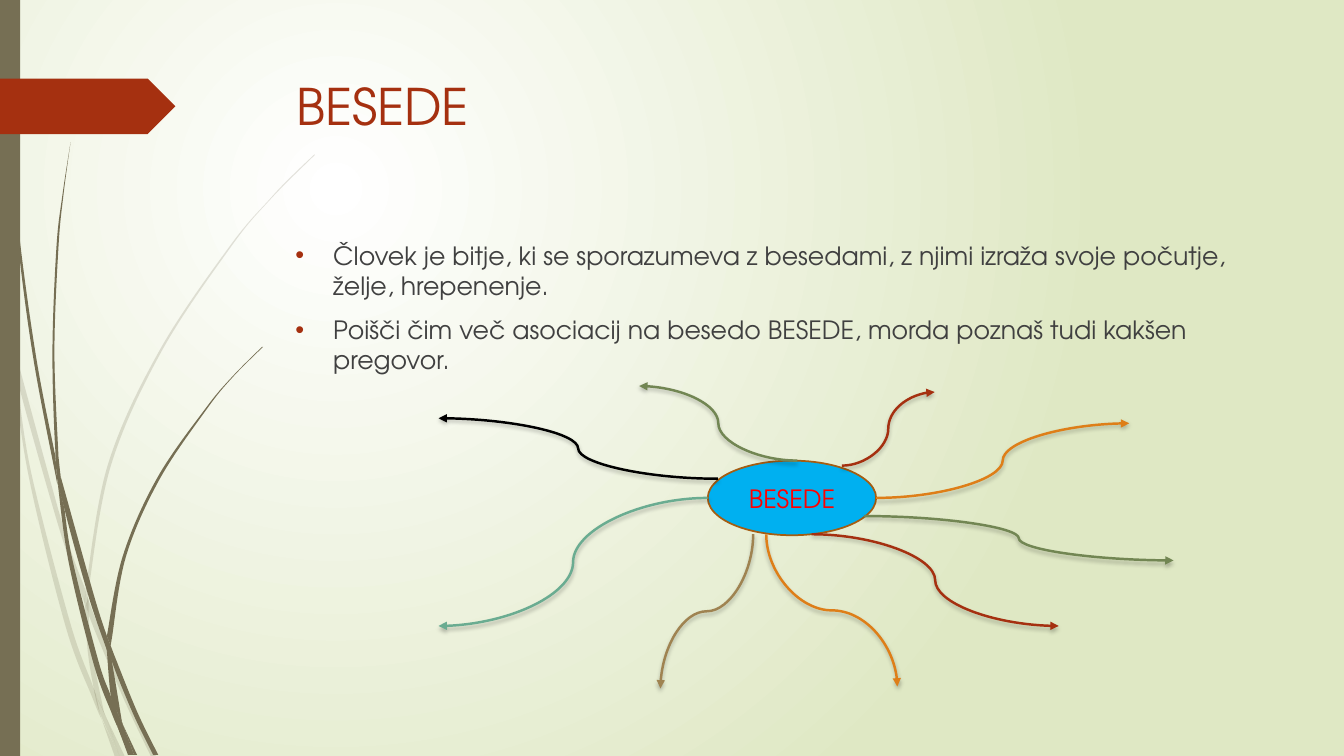
import lxml.etree
import pptx
import pptx.dml.color
import pptx.enum.shapes
import pptx.enum.text
import pptx.oxml.ns
import pptx.util

CM_PER_INCH = 2.54
FONT = "TeX Gyre Adventor"
COLOURS = {
    "centre": "FFFFFF", "edge": "DFE8C4", "stalk": "766F54", "red": "A53010", "text": "404040",
    "bubble": "00B0F0", "bubble_line": "A45D12", "word": "FF0000", "orange": "DE7E18",
    "teal": "6AAC91", "black": "000000", "brown": "9F8351", "green": "728653",
}

HEADING = "BESEDE"
POINTS = [
    "Človek je bitje, ki se sporazumeva z besedami, z njimi izraža svoje počutje, želje, hrepenenje.",
    "Poišči čim več asociacij na besedo BESEDE, morda poznaš tudi kakšen pregovor.",
]
WORD = "BESEDE"

PALE_STALKS = [
    ([(0, 2.82), (0.09, 3.22), (0.11, 3.5)], [(0.1, 3.44), (0, 2.99)]),
    ([(0.14, 3.45), (0.17, 3.76), (0.58, 5.22), (0.84, 5.99)], [(0.85, 5.86), (0.62, 5.2), (0.14, 3.45)]),
    ([(0.88, 5.96), (0.88, 6.1), (1.23, 6.94), (1.5, 7.51)], [(1.55, 7.51), (1.27, 6.92), (0.92, 6.07)]),
    ([(1.05, 7.11), (1.19, 7.51)], [(1.24, 7.51), (1.05, 7.11)]),
    ([(0.11, 3.5), (0.28, 4.7), (0.65, 6.21), (0.92, 6.93), (1.01, 7.14)],
     [(0.99, 7.07), (0.93, 6.83), (0.7, 6.19), (0.31, 4.69), (0.17, 3.76)]),
    ([(0.84, 5.99), (0.87, 6.46), (0.93, 6.83), (0.96, 6.92), (1.05, 7.11)],
     [(1.03, 7.06), (0.91, 6.46), (0.88, 6.1)]),
    ([(3.12, 1.53), (2.89, 1.75), (2.68, 1.97), (2.28, 2.44), (1.58, 3.48), (1.07, 4.61), (0.85, 5.84)],
     [(0.88, 5.96), (0.88, 5.84), (1.1, 4.62), (1.6, 3.49), (2.29, 2.45), (2.68, 1.98), (3.12, 1.54)]),
    ([(1.01, 7.14), (1.14, 7.51)], [(1.19, 7.51), (1.01, 7.14)]),
    ([(0.85, 5.86), (0.84, 5.99), (0.88, 6.08)], [(0.88, 6.1), (0.88, 5.96)]),
    ([(0.93, 6.83), (0.99, 7.07), (1.19, 7.51)], [(1.19, 7.51), (1.05, 7.11), (0.96, 6.92)]),
]
DARK_STALKS = [
    ([(0.03, 0), (0.04, 0.48), (0.07, 1.1), (0.17, 2.33), (0.33, 3.55), (0.57, 4.81)],
     [(0.55, 4.53), (0.36, 3.55), (0.19, 2.32), (0.08, 1.09), (0.05, 0.48), (0.04, 0)]),
    ([(0.6, 4.72), (0.64, 5.05), (0.88, 5.92), (1.06, 6.45)], [(1.06, 6.31), (0.93, 5.9), (0.6, 4.72)]),
    ([(1.1, 6.41), (1.11, 6.56), (1.32, 7.08), (1.52, 7.49)], [(1.57, 7.49), (1.36, 7.06), (1.13, 6.49)]),
    ([(0.57, 4.77), (0.68, 5.57), (0.93, 6.59), (1.11, 7.08), (1.17, 7.22)],
     [(1.16, 7.17), (1.1, 6.91), (0.98, 6.57), (0.72, 5.56), (0.64, 5.05)]),
    ([(0.7, 1.41), (0.62, 1.93), (0.56, 2.45), (0.52, 3.49), (0.55, 4.49), (0.6, 4.72)],
     [(0.58, 4.53), (0.54, 3.49), (0.58, 2.45), (0.63, 1.93), (0.7, 1.41)]),
    ([(1.22, 7.19), (1.33, 7.49)], [(1.36, 7.49), (1.22, 7.19)]),
    ([(0.55, 4.49), (0.57, 4.77), (0.64, 5.05)], [(0.6, 4.72), (0.55, 4.49)]),
    ([(2.6, 3.44), (2.31, 3.73), (2.04, 4.05), (1.56, 4.74), (1.22, 5.51), (1.06, 6.31)],
     [(1.1, 6.41), (1.11, 6.33), (1.25, 5.52), (1.58, 4.76), (2.05, 4.06), (2.31, 3.74), (2.61, 3.44)]),
    ([(1.17, 7.22), (1.27, 7.49)], [(1.31, 7.49), (1.17, 7.22)]),
    ([(1.06, 6.45), (1.1, 6.91), (1.16, 7.06), (1.22, 7.19)], [(1.21, 7.16), (1.11, 6.56), (1.09, 6.51)]),
    ([(1.06, 6.31), (1.06, 6.45), (1.11, 6.56)], [(1.1, 6.41), (1.06, 6.31)]),
    ([(1.1, 6.91), (1.17, 7.22), (1.3, 7.49)], [(1.33, 7.49), (1.22, 7.19), (1.16, 7.06)]),
]
ARROWS = [
    ((8.69, 4.94), (11.2, 4.2), "orange", False),
    ((7.02, 4.94), (4.35, 6.21), "teal", False),
    ((8.05, 5.3), (10.5, 6.21), "red", False),
    ((7.12, 4.75), (4.35, 4.15), "black", False),
    ((7.47, 5.3), (6.55, 6.83), "brown", True),
    ((8.35, 4.62), (9.27, 3.89), "red", False),
    ((7.6, 5.3), (8.9, 6.81), "orange", True),
    ((8.57, 5.12), (11.64, 5.56), "green", False),
    ((7.91, 4.57), (6.34, 3.83), "green", False),
]
TITLE, BODY = (2.84, 0.69, 9.75, 1.4), (2.83, 2.33, 9.75, 4.13)
STRIP, TAG, BUBBLE = (0, 0, 0.2, 7.5), (0, 0.78, 1.74, 0.55), (7.02, 4.57, 1.67, 0.74)


def lengths(*inches):
    return [pptx.util.Cm(value * CM_PER_INCH) for value in inches]


def colour(name):
    return pptx.dml.color.RGBColor.from_string(COLOURS[name])


def add_xml(parent, tag, **attributes):
    return lxml.etree.SubElement(parent, pptx.oxml.ns.qn(tag), attributes)


def apply_formats(target, formats):
    for name, value in formats.items():
        setattr(target, name, value)


def paint(part, fill, line=None):
    part.shadow.inherit = False
    part.fill.solid()
    part.fill.fore_color.rgb = colour(fill)
    if line:
        part.line.color.rgb = colour(line)
        part.line.width = pptx.util.Pt(1.25)
    else:
        part.line.fill.background()


def write(paragraph, text, size, ink, align):
    paragraph.alignment = align
    run = paragraph.add_run()
    run.text = text
    apply_formats(run.font, {"name": FONT, "size": pptx.util.Pt(size)})
    run.font.color.rgb = colour(ink)


def curve_points(edge):
    padded = [edge[0], *edge, edge[-1]]
    for before, start, end, after in zip(padded, padded[1:], padded[2:], padded[3:]):
        yield [s + (e - b) / 6 for b, s, e in zip(before, start, end)]
        yield [e - (a - s) / 6 for s, e, a in zip(start, end, after)]
        yield end


def draw_stalk(shapes, down, up, opacity):
    points = [*curve_points(down), down[-1], up[0], up[0], *curve_points(up)]
    builder = shapes.build_freeform(*lengths(*down[0]))
    builder.add_line_segments([lengths(*point) for point in points])
    stalk = builder.convert_to_shape()
    paint(stalk, "stalk")
    outline = stalk.element.spPr.find(".//" + pptx.oxml.ns.qn("a:path"))
    lines = outline.findall(pptx.oxml.ns.qn("a:lnTo"))[:len(points)]
    for first in range(0, len(points), 3):
        curve = lxml.etree.Element(pptx.oxml.ns.qn("a:cubicBezTo"))
        lines[first].addprevious(curve)
        for line in lines[first:first + 3]:
            curve.append(line[0])
            outline.remove(line)
    if opacity < 100:
        ink = stalk.element.spPr.find(".//" + pptx.oxml.ns.qn("a:srgbClr"))
        add_xml(ink, "a:alpha", val=str(opacity * 1000))


def draw_arrow(shapes, start, end, ink, upright):
    if upright:
        middle_x, middle_y = (start[0] + end[0]) / 2, (start[1] + end[1]) / 2
        run, rise = (end[0] - start[0]) / 2, (end[1] - start[1]) / 2
        start, end = (middle_x - rise, middle_y + run), (middle_x + rise, middle_y - run)
    arrow = shapes.add_connector(pptx.enum.shapes.MSO_CONNECTOR.CURVE, *lengths(*start, *end))
    arrow.line.color.rgb = colour(ink)
    arrow.line.width = pptx.util.Pt(1.75)
    properties = arrow.element.spPr
    if upright:
        properties.find(pptx.oxml.ns.qn("a:xfrm")).set("rot", "5400000")
    add_xml(properties.find(pptx.oxml.ns.qn("a:ln")), "a:tailEnd", type="triangle")
    shadow = add_xml(add_xml(properties, "a:effectLst"), "a:outerShdw",
                     blurRad="38100", dist="25400", dir="5400000", rotWithShape="0")
    add_xml(add_xml(shadow, "a:srgbClr", val=COLOURS["black"]), "a:alpha", val="25000")


def draw_background(slide):
    fill = slide.background.fill
    fill.gradient()
    for stop, name in zip(fill.gradient_stops, ("centre", "edge")):
        stop.color.rgb = colour(name)
    gradient = slide.element.find(".//" + pptx.oxml.ns.qn("a:gradFill"))
    gradient.remove(gradient.find(pptx.oxml.ns.qn("a:lin")))
    circle = add_xml(gradient, "a:path", path="circle")
    add_xml(circle, "a:fillToRect", l="50000", t="50000", r="100000", b="100000")


def place_text(placeholder, place):
    apply_formats(placeholder, dict(zip(("left", "top", "width", "height"), lengths(*place))))
    apply_formats(placeholder.text_frame, {
        "word_wrap": True, "auto_size": pptx.enum.text.MSO_AUTO_SIZE.NONE,
        "vertical_anchor": pptx.enum.text.MSO_ANCHOR.TOP})
    return placeholder.text_frame


def main():
    deck = pptx.Presentation()
    deck.slide_width, deck.slide_height = lengths(13.33, 7.5)
    slide = deck.slides.add_slide(deck.slide_layouts[1])
    shapes, align, preset = slide.shapes, pptx.enum.text.PP_ALIGN, pptx.enum.shapes.MSO_SHAPE
    draw_background(slide)
    for stalks, opacity in ((PALE_STALKS, 20), (DARK_STALKS, 100)):
        for down, up in stalks:
            draw_stalk(shapes, down, up, opacity)
    for kind, place, fill in ((preset.RECTANGLE, STRIP, "stalk"), (preset.PENTAGON, TAG, "red")):
        paint(shapes.add_shape(kind, *lengths(*place)), fill)

    title = place_text(shapes.title, TITLE)
    write(title.paragraphs[0], HEADING, 36, "red", align.LEFT)
    body = place_text(slide.placeholders[1], BODY)
    for index, point in enumerate(POINTS):
        paragraph = body.add_paragraph() if index else body.paragraphs[0]
        write(paragraph, point, 18, "text", align.LEFT)
        paragraph.space_before = pptx.util.Pt(10)
        indents = paragraph._p.get_or_add_pPr()
        indents.set("marL", "342900")
        indents.set("indent", "-342900")
        add_xml(add_xml(indents, "a:buClr"), "a:srgbClr", val=COLOURS["red"])
        add_xml(indents, "a:buFont", typeface="Arial")
        add_xml(indents, "a:buChar", char="•")

    bubble = shapes.add_shape(preset.OVAL, *lengths(*BUBBLE))
    paint(bubble, "bubble", "bubble_line")
    bubble.text_frame.vertical_anchor = pptx.enum.text.MSO_ANCHOR.MIDDLE
    write(bubble.text_frame.paragraphs[0], WORD, 18, "word", align.CENTER)
    for arrow in ARROWS:
        draw_arrow(shapes, *arrow)
    deck.save("out.pptx")


if __name__ == "__main__":
    main()
